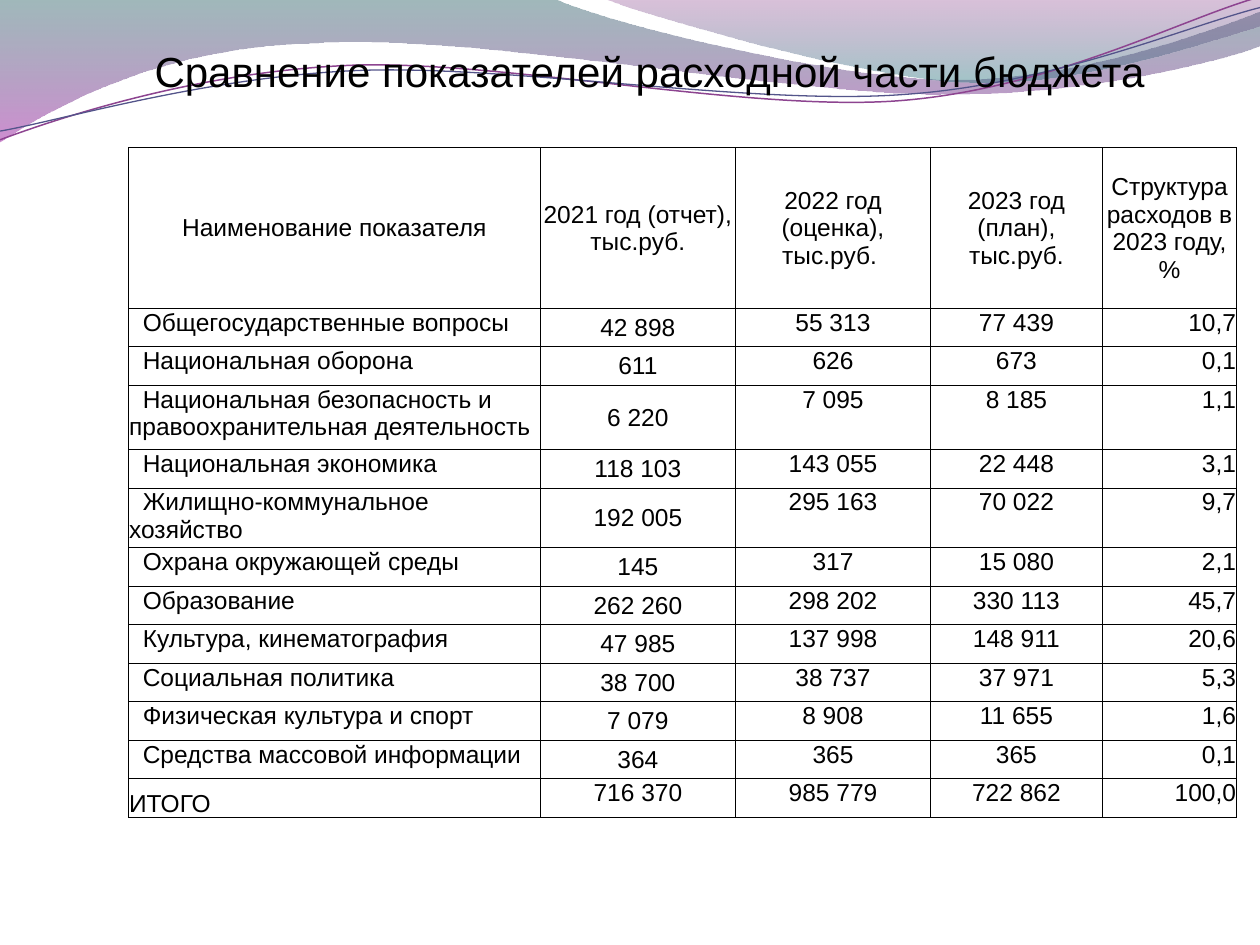
import pptx
import pptx.util
import pptx.dml.color
import pptx.enum.text
import pptx.oxml
import pptx.oxml.ns
from pptx.util import Pt

ALIGN = pptx.enum.text.PP_ALIGN
ANCHOR = pptx.enum.text.MSO_ANCHOR
NS = pptx.oxml.ns.nsdecls("a")
FONT = "Arial"
BLACK, WHITE = "000000", "FFFFFF"

RIBBONS = [
    ([(0, 0), (316.8, -0.7), (342.7, 12.2, 478, 45.4, 545.8, 45.4),
      (614.2, 45.4, 689.8, 18.7, 720, 6.5), (720.7, 25.9),
      (707.8, 31.7, 626.4, 54.7, 537.1, 54), (447.8, 54, 275, 20.2, 185, 24.5),
      (92.9, 25.9, 33.1, 59.8, -0.7, 81.4)],
     [("2D6368", 45), ("A530A9", 55)]),
    ([(344.9, -0.7), (366.5, 7.9, 491, 44.6, 553.7, 46.8),
      (616.3, 49.7, 691.9, 23, 720, 15.1), (720, 0)],
     [("7F2F82", 30), ("2F7B82", 45)]),
]
WAVES = [
    ([(0, 79.9), (34.6, 67, 113.8, 41, 199.4, 37.4),
      (284.4, 33.8, 427, 64.1, 513.4, 57.6), (599.8, 51.1, 675.4, 10.8, 718.6, -1.4)],
     "8D4490", 0.85),
    ([(0, 74.9), (33.8, 69.1, 118.1, 43.9, 203.8, 40.3),
      (290.2, 36.7, 429.8, 60.5, 516.2, 54), (601.9, 48.2, 677.5, 15.1, 720, 4.3)],
     "53548A", 0.75),
]

HEADER = ["Наименование показателя", "2021 год (отчет), тыс.руб.",
          "2022 год (оценка), тыс.руб. ", "2023 год (план), тыс.руб.",
          "Структура расходов в 2023 году, %"]
ROWS = [
    ["Общегосударственные вопросы", "42 898", "55 313", "77 439", "10,7"],
    ["Национальная оборона", "611", "626", "673", "0,1"],
    ["Национальная безопасность и правоохранительная деятельность",
     "6 220", "7 095", "8 185", "1,1"],
    ["Национальная экономика", "118 103", "143 055", "22 448", "3,1"],
    ["Жилищно-коммунальное хозяйство", "192 005", "295 163", "70 022", "9,7"],
    ["Охрана окружающей среды", "145", "317", "15 080", "2,1"],
    ["Образование", "262 260", "298 202", "330 113", "45,7"],
    ["Культура, кинематография", "47 985", "137 998", "148 911", "20,6"],
    ["Социальная политика", "38 700", "38 737", "37 971", "5,3"],
    ["Физическая культура и спорт", "7 079", "8 908", "11 655", "1,6"],
    ["Средства массовой информации", "364", "365", "365", "0,1"],
]
TOTAL = ["ИТОГО", "716 370", "985 779", "722 862", "100,0"]
COLUMN_WIDTHS = [235.4, 111.5, 111.5, 98.2, 76.8]
HEADER_HEIGHT, ROW_HEIGHT = 91.8, 22.04
TALL_ROWS = {3: 36.6, 5: 34.1}


def color(value):
    return pptx.dml.color.RGBColor.from_string(value)


def set_font(p, size):
    p.font.name, p.font.size = FONT, Pt(size)
    p.font.color.rgb = color(BLACK)


def add_outline(slide, box, outline, close):
    left, top = box[:2]
    ends = [(Pt(left + s[-2]), Pt(top + s[-1])) for s in outline]
    fb = slide.shapes.build_freeform(*ends[0])
    fb.add_line_segments(ends[1:], close=close)
    sp = fb.convert_to_shape()
    sp.shadow.inherit = False
    lines = list(sp._element.iter(pptx.oxml.ns.qn("a:lnTo")))
    for line, segment in zip(lines, outline[1:]):
        if len(segment) == 6:
            pts = "".join(
                f'<a:pt x="{Pt(left + x) - sp.left}" y="{Pt(top + y) - sp.top}"/>'
                for x, y in zip(segment[::2], segment[1::2]))
            curve = pptx.oxml.parse_xml(f"<a:cubicBezTo {NS}>{pts}</a:cubicBezTo>")
            line.getparent().replace(line, curve)
    return sp


def add_waves(slide, box):
    for outline, stops in RIBBONS:
        sp = add_outline(slide, box, outline, True)
        sp.line.fill.background()
        sp.fill.gradient()
        sp.fill.gradient_angle = 270
        for stop, (value, opacity) in zip(sp.fill.gradient_stops, stops):
            stop.color.rgb = color(value)
        nodes = list(sp._element.spPr.iter(pptx.oxml.ns.qn("a:srgbClr")))
        for node, (value, opacity) in zip(nodes, stops):
            node.append(pptx.oxml.parse_xml(f'<a:alpha {NS} val="{opacity * 1000}"/>'))
    for outline, value, width in WAVES:
        sp = add_outline(slide, box, outline, False)
        sp.fill.background()
        sp.line.color.rgb = color(value)
        sp.line.width = Pt(width)


def add_title(slide, box):
    sp = slide.shapes.title
    sp.left, sp.top, sp.width, sp.height = map(Pt, box)
    tf = sp.text_frame
    tf.word_wrap = True
    tf.auto_size = pptx.enum.text.MSO_AUTO_SIZE.NONE
    tf.vertical_anchor = ANCHOR.MIDDLE
    p = tf.paragraphs[0]
    p.text = "Сравнение показателей расходной части бюджета "
    p.alignment = ALIGN.CENTER
    set_font(p, 24)


def add_borders(cell):
    tcPr = cell._tc.get_or_add_tcPr()
    for side in "LRTB":
        tcPr.append(pptx.oxml.parse_xml(
            f'<a:ln{side} {NS} w="{Pt(0.5)}"><a:solidFill>'
            f'<a:srgbClr val="{BLACK}"/></a:solidFill></a:ln{side}>'))


def cell_anchor(row, column, last):
    if row == 0 or (column == 1 and row != last):
        return ANCHOR.MIDDLE
    return ANCHOR.BOTTOM if row == last and column == 0 else ANCHOR.TOP


def add_budget_table(slide, box):
    data = [HEADER] + ROWS + [TOTAL]
    last = len(data) - 1
    table = slide.shapes.add_table(len(data), len(HEADER), *map(Pt, box)).table
    table.first_row = table.horz_banding = False
    for column, width in zip(table.columns, COLUMN_WIDTHS):
        column.width = Pt(width)
    for r, values in enumerate(data):
        table.rows[r].height = Pt(TALL_ROWS.get(r, ROW_HEIGHT if r else HEADER_HEIGHT))
        for c, value in enumerate(values):
            cell = table.cell(r, c)
            cell.margin_left = cell.margin_right = cell.margin_top = Pt(0.4)
            cell.margin_bottom = 0
            cell.vertical_anchor = cell_anchor(r, c, last)
            add_borders(cell)
            cell.fill.solid()
            cell.fill.fore_color.rgb = color(WHITE)
            p = cell.text_frame.paragraphs[0]
            p.text = value
            p.alignment = ALIGN.CENTER
            if r > 0 and c == 0:
                p.alignment = ALIGN.LEFT
            elif r > 0 and c == len(values) - 1:
                p.alignment = ALIGN.RIGHT
            if c == 0 and 0 < r < last:
                p._p.get_or_add_pPr().set("indent", str(Pt(7.8)))
            set_font(p, 14)


def main():
    prs = pptx.Presentation()
    prs.slide_width, prs.slide_height = Pt(720), Pt(540)
    slide = prs.slides.add_slide(prs.slide_layouts[5])
    slide.background.fill.solid()
    slide.background.fill.fore_color.rgb = color(WHITE)
    add_waves(slide, (0, 0, 720, 82))
    title = slide.shapes.title._element
    title.getparent().append(title)
    add_title(slide, (78.5, 22.3, 585.4, 36))
    add_budget_table(slide, (73.4, 84.4, 633.4, 382.4))
    prs.save("out.pptx")


if __name__ == "__main__":
    main()
